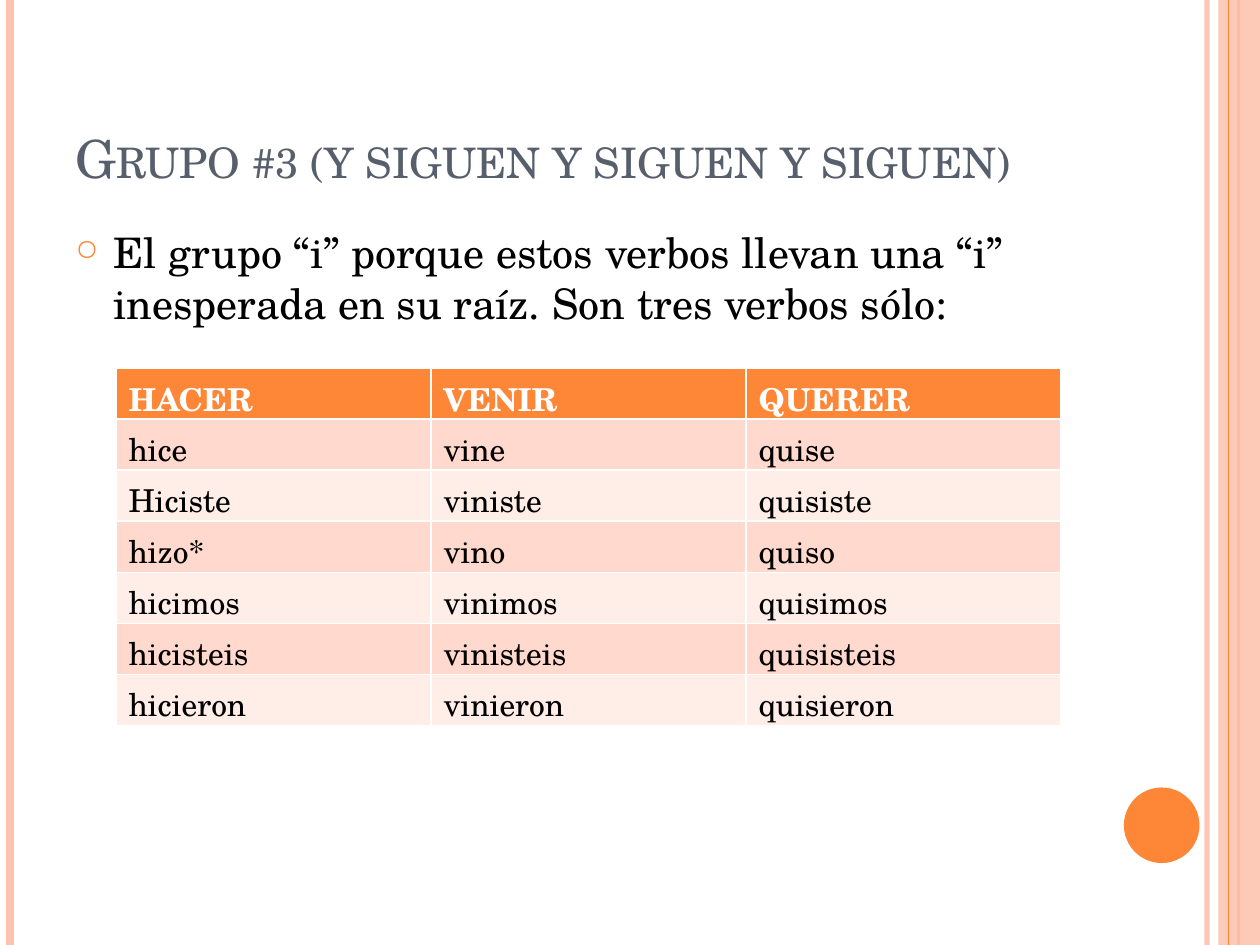
import pptx
import pptx.dml.color
import pptx.enum.shapes
import pptx.enum.text
import pptx.oxml.ns
import pptx.util
from lxml import etree
from pptx.util import Inches

RGBColor = pptx.dml.color.RGBColor
ORANGE = RGBColor(0xFE, 0x86, 0x37)
PEACH = RGBColor(0xFE, 0xC3, 0xAE)
SLATE = RGBColor(0x57, 0x5F, 0x6D)
BLACK = RGBColor(0, 0, 0)
WHITE = RGBColor(0xFF, 0xFF, 0xFF)
BANDS = (RGBColor(0xFF, 0xD9, 0xCE), RGBColor(0xFF, 0xED, 0xE8))
FONT = "TeX Gyre Schola"
VERBS = [
    ("HACER", "VENIR", "QUERER"),
    ("hice", "vine", "quise"),
    ("Hiciste", "viniste", "quisiste"),
    ("hizo*", "vino", "quiso"),
    ("hicimos", "vinimos", "quisimos"),
    ("hicisteis", "vinisteis", "quisisteis"),
    ("hicieron", "vinieron", "quisieron"),
]


def add_child(parent, tag, **attrs):
    """Append a DrawingML element."""
    return etree.SubElement(parent, pptx.oxml.ns.qn(tag), attrs)


def set_opacity(shape, percent):
    """Make the colours set on a shape partly transparent."""
    for color in shape._element.spPr.iter(pptx.oxml.ns.qn("a:srgbClr")):
        add_child(color, "a:alpha", val=str(percent * 1000))


def style_font(p, size, color, bold=False):
    """Set the font of a whole paragraph."""
    p.font.name = FONT
    p.font.size = pptx.util.Pt(size)
    p.font.color.rgb = color
    p.font.bold = bold


def add_stripe(s, x, top, height, color, width, opacity=100):
    """Draw one vertical stripe."""
    line = s.shapes.add_connector(
        pptx.enum.shapes.MSO_CONNECTOR.STRAIGHT, x, top, x, top + height)
    line.line.color.rgb = color
    line.line.width = pptx.util.Pt(width)
    add_child(line._element.spPr, "a:effectLst")
    if opacity < 100:
        set_opacity(line, opacity)


def add_solid(s, kind, left, top, width, height, color):
    """Draw a filled shape without outline."""
    shape = s.shapes.add_shape(kind, left, top, width, height)
    shape.shadow.inherit = False
    shape.fill.solid()
    shape.fill.fore_color.rgb = color
    shape.line.fill.background()
    return shape


def add_frame(s, left, top, width, height):
    """Draw the stripes, side band and disc around the content."""
    kinds = pptx.enum.shapes.MSO_SHAPE
    right = left + width
    add_stripe(s, right - Inches(0.42), top, height, PEACH, 3, 93)
    add_stripe(s, left + Inches(0.08), top, height, PEACH, 4.5)
    add_stripe(s, right - Inches(0.17), top, height, ORANGE, 1.5)
    band = add_solid(s, kinds.RECTANGLE, right - Inches(0.33), top,
                     Inches(0.33), height, PEACH)
    set_opacity(band, 87)
    add_stripe(s, right - Inches(0.25), top, height, ORANGE, 0.75)
    add_solid(s, kinds.OVAL, right - Inches(1.08), top + height - Inches(1.25),
              Inches(0.6), Inches(0.6), ORANGE)


def add_text(s, left, top, width, height, text):
    """Add a wrapped text box and return its frame and paragraph."""
    tf = s.shapes.add_textbox(left, top, width, height).text_frame
    tf.word_wrap = True
    p = tf.paragraphs[0]
    p.add_run().text = text
    return tf, p


def add_title(s, left, top, width, height):
    """Add the small-caps title at the bottom of its box."""
    tf, p = add_text(s, left, top, width, height,
                     "Grupo #3 (y siguen y siguen y siguen)")
    tf.vertical_anchor = pptx.enum.text.MSO_ANCHOR.BOTTOM
    style_font(p, 30, SLATE)
    p.runs[0]._r.get_or_add_rPr().set("cap", "small")


def add_body(s, left, top, width, height):
    """Add the bulleted explanation."""
    tf, p = add_text(
        s, left, top, width, height,
        "El grupo “i” porque estos verbos llevan una “i” "
        "inesperada en su raíz. Son tres verbos sólo:")
    p.space_before = pptx.util.Pt(6)
    ppr = p._p.get_or_add_pPr()
    ppr.set("marL", str(Inches(0.3)))
    ppr.set("indent", str(Inches(-0.3)))
    add_child(add_child(ppr, "a:buClr"), "a:srgbClr", val=str(ORANGE))
    add_child(ppr, "a:buSzPct", val="70000")
    add_child(ppr, "a:buChar", char="○")
    style_font(p, 24, BLACK)


def add_verb_table(s, left, top, width, height):
    """Add the conjugation table with a header and banded rows."""
    table = s.shapes.add_table(len(VERBS), len(VERBS[0]),
                               left, top, width, height).table
    for i, verbs in enumerate(VERBS):
        header = i == 0
        for j, verb in enumerate(verbs):
            cell = table.cell(i, j)
            cell.text = verb
            cell.fill.solid()
            cell.fill.fore_color.rgb = ORANGE if header else BANDS[(i - 1) % 2]
            style_font(cell.text_frame.paragraphs[0], 18,
                       WHITE if header else BLACK, header)


def main():
    """Build and save the slide."""
    prs = pptx.Presentation()
    prs.slide_width, prs.slide_height = Inches(10), Inches(7.5)
    s = prs.slides.add_slide(prs.slide_layouts[6])
    add_frame(s, 0, 0, prs.slide_width, prs.slide_height)
    add_title(s, Inches(0.5), Inches(0.3), Inches(8.17), Inches(1.25))
    add_body(s, Inches(0.5), Inches(1.75), Inches(8.17), Inches(5.33))
    add_verb_table(s, Inches(0.92), Inches(2.92), Inches(7.5), Inches(2.84))
    prs.save("out.pptx")


if __name__ == "__main__":
    main()
